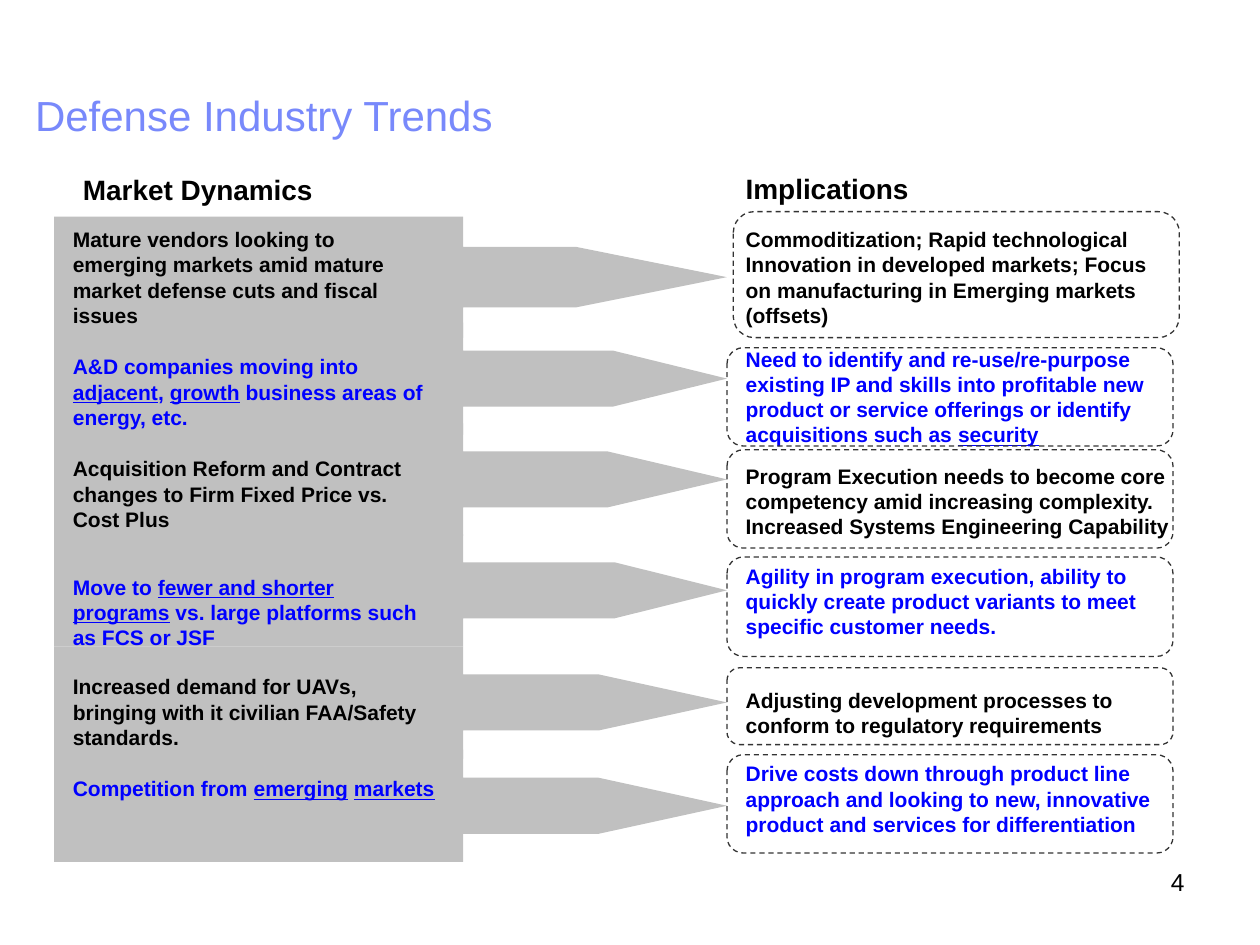
"""Build the Defense Industry Trends slide."""
from dataclasses import dataclass

from pptx import Presentation
from pptx.dml.color import RGBColor
from pptx.enum import dml, shapes, text
from pptx.util import Inches, Pt


@dataclass(frozen=True)
class Theme:
    font: str = "Arial"
    ink: str = "000000"
    accent: str = "0000FF"
    heading: str = "7889FB"
    panel: str = "C0C0C0"
    outline: str = "333333"
    title_size: int = 24
    header_size: int = 16
    number_size: int = 14
    body_size: int = 12


class Deck:
    def __init__(self, theme):
        self.theme = theme
        self.presentation = Presentation()
        self.presentation.slide_width = Inches(10)
        self.presentation.slide_height = Inches(7.5)
        self.slide = self.presentation.slides.add_slide(self.presentation.slide_layouts[6])

    def preset(self, kind, bounds, adjustments):
        shape = self.slide.shapes.add_shape(kind, *map(Inches, bounds))
        shape.shadow.inherit = False
        for index, value in enumerate(adjustments):
            shape.adjustments[index] = value
        return shape

    def arrow(self, top, height, head):
        callout = self.preset(shapes.MSO_SHAPE.RIGHT_ARROW_CALLOUT,
                              (0.43, top, 5.34, height), (0.5, 0.25, head, 0.608))
        callout.fill.solid()
        callout.fill.fore_color.rgb = RGBColor.from_string(self.theme.panel)
        callout.line.fill.background()

    def frame(self, left, top, height):
        outline = self.preset(shapes.MSO_SHAPE.ROUNDED_RECTANGLE,
                              (left, top, 3.54, height), (0.167,))
        outline.fill.background()
        outline.line.color.rgb = RGBColor.from_string(self.theme.outline)
        outline.line.width = Pt(0.75)
        outline.line.dash_style = dml.MSO_LINE.DASH

    def label(self, words, bounds, size, color, bold=True, align=None, anchor=None, spacing=None):
        """Add a text box, underlining the words between underscores."""
        box = self.slide.shapes.add_textbox(*map(Inches, bounds))
        frame = box.text_frame
        frame.word_wrap = True
        if anchor is not None:
            frame.vertical_anchor = anchor
        paragraph = frame.paragraphs[0]
        paragraph.alignment = align
        paragraph.line_spacing = spacing
        font = paragraph.font
        font.name, font.size, font.bold = self.theme.font, Pt(size), bold
        font.color.rgb = RGBColor.from_string(color)
        for index, part in enumerate(words.split("_")):
            if part:
                run = paragraph.add_run()
                run.text = part
                if index % 2:
                    run.font.underline = True


@dataclass(frozen=True)
class Trend:
    dynamic: str
    dynamic_bounds: tuple
    implication: str
    implication_bounds: tuple
    arrow: tuple
    frame: tuple


TRENDS = [
    Trend("Mature vendors looking to emerging markets amid mature market defense cuts "
          "and fiscal issues", (0.48, 1.75, 2.96, 0.9),
          "Commoditization; Rapid technological Innovation in developed markets; Focus on "
          "manufacturing in Emerging markets (offsets)", (5.82, 1.75, 3.54, 0.9),
          (1.72, 0.96, 1.248), (5.82, 1.68, 1)),
    Trend("A&D companies moving into _adjacent_, _growth_ business areas of energy, etc.",
          (0.48, 2.76, 3.15, 0.7),
          "Need to identify and re-use/re-purpose existing IP and skills into profitable new "
          "product or service offerings or identify acquisitions such as _security_",
          (5.82, 2.7, 3.54, 0.9),
          (2.56, 0.89, 1.018), (5.77, 2.76, 0.78)),
    Trend("Acquisition Reform and Contract changes to Firm Fixed Price vs. Cost Plus",
          (0.48, 3.57, 2.96, 0.7),
          "Program Execution needs to become core competency amid increasing complexity. "
          "Increased Systems Engineering Capability", (5.82, 3.63, 3.76, 0.7),
          (3.36, 0.89, 1.066), (5.77, 3.57, 0.78)),
    Trend("Move to _fewer and shorter programs_ vs. large platforms such as FCS or JSF",
          (0.48, 4.51, 2.96, 0.7),
          "Agility in program execution, ability to quickly create product variants to meet "
          "specific customer needs.", (5.82, 4.42, 3.54, 0.7),
          (4.24, 0.89, 1.002), (5.77, 4.42, 0.79)),
    Trend("Increased demand for UAVs, bringing with it civilian FAA/Safety standards.",
          (0.48, 5.3, 2.96, 0.7),
          "Adjusting development processes to conform to regulatory requirements",
          (5.82, 5.41, 3.54, 0.5),
          (5.13, 0.89, 1.144), (5.77, 5.3, 0.61)),
    Trend("Competition from _emerging_ _markets_", (0.48, 6.11, 3.07, 0.5),
          "Drive costs down through product line approach and looking to new, innovative "
          "product and services for differentiation", (5.82, 5.99, 3.73, 0.7),
          (5.95, 0.89, 1.144), (5.77, 5.99, 0.78)),
]


def main():
    theme = Theme()
    deck = Deck(theme)
    deck.label("4", (7.17, 6.83, 2.33, 0.52), theme.number_size, theme.ink,
               bold=False, align=text.PP_ALIGN.RIGHT)
    deck.label("Defense Industry Trends", (0.18, 0.61, 9.57, 0.64), theme.title_size,
               theme.heading, bold=False, anchor=text.MSO_ANCHOR.MIDDLE, spacing=0.98)
    deck.label("Market Dynamics", (0.56, 1.32, 2.96, 0.37), theme.header_size, theme.ink)
    deck.label("Implications", (5.82, 1.31, 2.96, 0.37), theme.header_size, theme.ink)
    for trend in TRENDS:
        deck.arrow(*trend.arrow)
    for index, trend in enumerate(TRENDS):
        color = theme.accent if index % 2 else theme.ink
        deck.label(trend.dynamic, trend.dynamic_bounds, theme.body_size, color)
        deck.label(trend.implication, trend.implication_bounds, theme.body_size, color)
        deck.frame(*trend.frame)
    deck.presentation.save("out.pptx")


if __name__ == "__main__":
    main()
